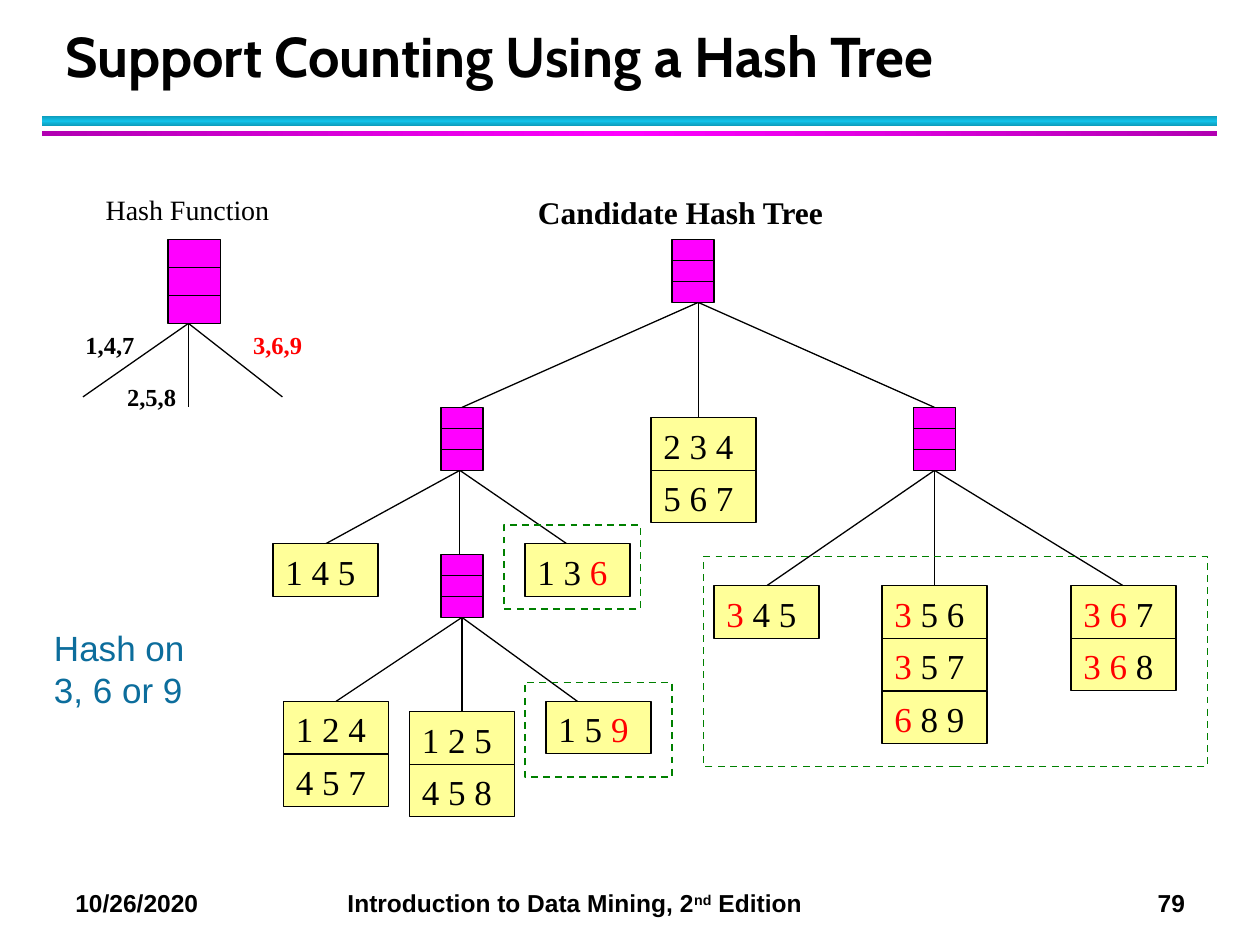
from copy import deepcopy
from pptx import Presentation
from pptx.dml.color import RGBColor as Rgb
from pptx.enum.dml import MSO_LINE as Dash
from pptx.enum.shapes import MSO_CONNECTOR as Conn, MSO_SHAPE as Kind
from pptx.enum.text import MSO_ANCHOR as Anchor, PP_ALIGN as Align
from pptx.oxml.ns import qn
from pptx.oxml.xmlchemy import OxmlElement as Elem
from pptx.util import Inches, Pt

THEME = {
    "ink": "000000", "hit": "FF0000", "note": "0C6D9C", "node": "FF00FF",
    "leaf": "FFFF99", "frame": "008000",
    "cyan": ("0E9BBA", "12C2E9", "0E9BBA"),
    "pink": ("B200B2", "FF00FF", "B200B2"),
    "head": "Cabin", "sans": "Arial", "serif": "Times New Roman",
    "title": 32, "big": 20, "sub": 18, "mid": 16, "small": 14,
}

# The tree sits on a grid of 1/12 inch whose row 0 is 1.9 inches down.
STEP, TOP = 1 / 12, 1.9
LEAF = (10, 5)

# column, row, width, height, where edges start, where they end
NODES = [
    (64, 0, 4, 6, (66.5, 6), [(44, 16), (66.5, 17), (89, 16)]),
    (42, 16, 4, 6, (43.8, 22), [(31, 29), (43.8, 30), (54, 29)]),
    (87, 16, 4, 6, (89, 22), [(73, 33), (89, 33), (107, 33)]),
    (42, 30, 4, 6, (44, 36), [(32, 44), (44, 45), (55, 44)]),
    (16, 0, 5, 8, (17.95, 8), [(7.9, 15), (17.95, 16), (26.9, 15)]),
]
# column, row, stacked itemsets; text between underscores is highlighted
LEAVES = [
    (62, 17, ["2 3 4", "5 6 7"]),
    (26, 29, ["1 4 5"]),
    (50, 29, ["1 3 _6_"]),
    (27, 44, ["1 2 4", "4 5 7"]),
    (39, 45, ["1 2 5", "4 5 8"]),
    (52, 44, ["1 5 _9_"]),
    (68, 33, ["_3_ 4 5"]),
    (84, 33, ["_3_ 5 6", "_3_ 5 7", "_6_ 8 9"]),
    (102, 33, ["_3 6_ 7", "_3 6_ 8"]),
]
FRAMES = [(50, 42.2, 14, 9), (67, 30.2, 48, 20), (48, 27.2, 13, 8)]

# text, place in inches, font, size, colour, bold, wrap
LABELS = [
    ("Support Counting Using a Hash Tree", (0.42, 0.17, 9.06, 0.58),
     "head", "title", "ink", True, True),
    ("Hash Function", (0.74, 1.48, 1.51, 0.37), "serif", "mid", "ink", False, False),
    ("Candidate Hash Tree", (4.17, 1.48, 2.49, 0.4), "serif", "sub", "ink", True, False),
    ("1,4,7", (0.58, 2.57, 0.59, 0.33), "serif", "small", "ink", True, False),
    ("2,5,8", (0.91, 2.98, 0.59, 0.33), "serif", "small", "ink", True, False),
    ("3,6,9", (1.91, 2.57, 0.59, 0.33), "serif", "small", "hit", True, False),
    ("Hash on 3, 6 or 9", (0.33, 4.92, 1.25, 0.77), "sans", "big", "note", False, True),
]
FOOTER = ["10/26/2020\tIntroduction to Data Mining, 2", "nd", " Edition\t79"]
TABS = (2.16, 8.59)
BARS = [((0.33, 0.92, 9.33, 0.08), "cyan", 90), ((0.33, 1.04, 9.33, 0.04), "pink", 0)]

deck = Presentation()
deck.slide_width, deck.slide_height = Inches(10), Inches(7.5)
shapes = deck.slides.add_slide(deck.slide_layouts[6]).shapes


def hue(name):
    return Rgb.from_string(THEME[name])


def spot(col, row):
    return Inches(col * STEP), Inches(TOP + row * STEP)


def style(run, face, size, tint, bold=False):
    font = run.font
    font.name, font.size, font.bold = THEME[face], Pt(THEME[size]), bold
    font.color.rgb = hue(tint)


def rect(place):
    shape = shapes.add_shape(Kind.RECTANGLE, *place)
    shape.shadow.inherit = False
    return shape


def cell(col, row, wide, high, fill=None):
    """Draw a box on the grid: filled, or a dashed frame without a fill."""
    shape = rect((*spot(col, row), Inches(wide * STEP), Inches(high * STEP)))
    if fill:
        shape.fill.solid()
        shape.fill.fore_color.rgb = hue(fill)
    else:
        shape.fill.background()
        shape.line.dash_style = Dash.DASH
    shape.line.color.rgb = hue("ink" if fill else "frame")
    shape.line.width = Pt(0.75 if fill else 1)
    return shape


def edge(start, end):
    line = shapes.add_connector(Conn.STRAIGHT, *spot(*start), *spot(*end))
    line.line.color.rgb, line.line.width = hue("ink"), Pt(0.75)
    line._element.spPr.append(Elem("a:effectLst"))


def label(text, place, face, size, tint, bold, wrap):
    box = shapes.add_textbox(*map(Inches, place))
    frame = box.text_frame
    frame.word_wrap, frame.text = wrap, text
    for run in frame.paragraphs[0].runs:
        style(run, face, size, tint, bold)
    return frame


def leaf(col, row, text):
    frame = cell(col, row, *LEAF, "leaf").text_frame
    frame.vertical_anchor = Anchor.TOP
    para = frame.paragraphs[0]
    para.alignment = Align.LEFT
    for i, part in enumerate(text.split("_")):
        if part:
            run = para.add_run()
            run.text = part
            style(run, "serif", "big", "hit" if i % 2 else "ink")


def bar(place, tones, angle):
    shape = rect(map(Inches, place))
    shape.line.fill.background()
    shape.fill.gradient()
    shape.fill.gradient_angle = angle
    stops = shape._element.spPr.find(".//" + qn("a:gsLst"))
    stops.append(deepcopy(stops[0]))
    for i, (stop, tone) in enumerate(zip(shape.fill.gradient_stops, THEME[tones])):
        stop.position, stop.color.rgb = i / 2, Rgb.from_string(tone)


def footer():
    first, *rest = FOOTER
    frame = label(first, (0.5, 7, 9.33, 0.34), "sans", "small", "ink", True, True)
    para = frame.paragraphs[0]
    for text in rest:
        run = para.add_run()
        run.text = text
        style(run, "sans", "small", "ink", True)
    para.runs[1].font._element.set("baseline", "30000")
    tabs = Elem("a:tabLst")
    for place in TABS:
        tab = Elem("a:tab")
        tab.set("pos", str(Inches(place)))
        tab.set("algn", "l")
        tabs.append(tab)
    para._p.get_or_add_pPr().append(tabs)


for item in BARS:
    bar(*item)
footer()
for col, row, wide, high, start, ends in NODES:
    for end in ends:
        edge(start, end)
for col, row, wide, high, *_ in NODES:
    cell(col, row, wide, high, "node")
    for i in (1, 2):
        split = row + i * high / 3
        edge((col, split), (col + wide, split))
for col, row, sets in LEAVES:
    for i, text in enumerate(sets):
        leaf(col, row + i * LEAF[1], text)
title, *_ = [label(*item) for item in LABELS]
title.vertical_anchor = Anchor.BOTTOM
title.paragraphs[0].line_spacing = Pt(36)
for item in FRAMES:
    cell(*item)

deck.save("out.pptx")
